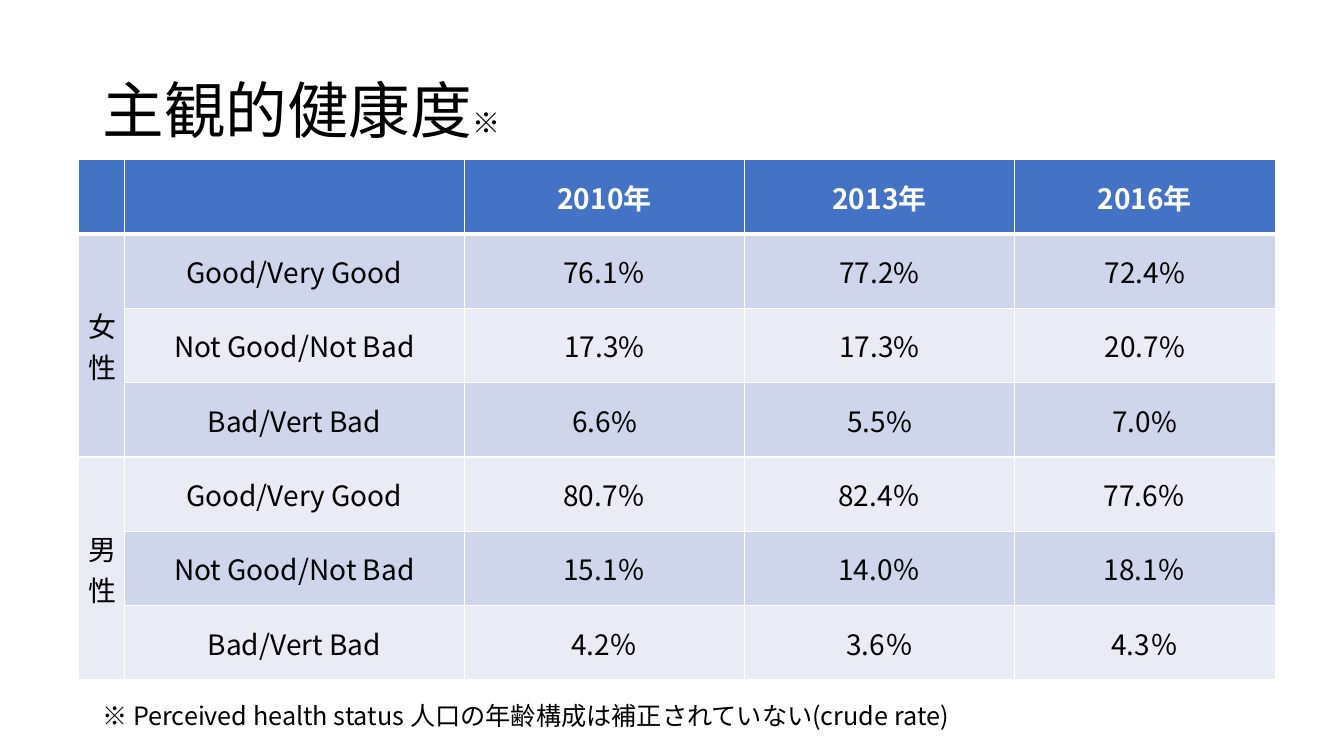
from lxml.etree import SubElement
from pptx import Presentation
from pptx.dml.color import RGBColor
from pptx.enum.text import MSO_ANCHOR, MSO_AUTO_SIZE, PP_ALIGN
from pptx.oxml import parse_xml
from pptx.oxml.ns import nsdecls, qn
from pptx.util import Pt

FONT = "Noto Sans CJK JP"
COLORS = {"text": "000000", "white": "FFFFFF", "header": "4472C4",
          "dark_band": "CFD5EA", "light_band": "E9EBF5"}


def add_text(paragraph, text, size, color="text", bold=False):
    run = paragraph.add_run()
    run.text = text
    formats = {"name": FONT, "size": Pt(size), "bold": bold}
    for name, value in formats.items():
        setattr(run.font, name, value)
    run.font.color.rgb = RGBColor.from_string(COLORS[color])
    SubElement(run.font._element, qn("a:ea"), typeface=FONT)


def set_borders(cell, top, bottom):
    properties = cell._tc.get_or_add_tcPr()
    widths = {"lnL": 1, "lnR": 1, "lnT": top, "lnB": bottom}
    for index, (side, width) in enumerate(widths.items()):
        properties.insert(index, parse_xml(
            f'<a:{side} {nsdecls("a")} w="{Pt(width)}"><a:solidFill>'
            f'<a:srgbClr val="{COLORS["white"]}"/></a:solidFill></a:{side}>'))


presentation = Presentation()
presentation.slide_width, presentation.slide_height = Pt(960), Pt(540)
slide = presentation.slides.add_slide(presentation.slide_layouts[5])

# Title
title = slide.shapes.title
title.left, title.top, title.width, title.height = Pt(66), Pt(28.75), Pt(828), Pt(104.4)
title.text_frame.auto_size = MSO_AUTO_SIZE.NONE
title.text_frame.vertical_anchor = MSO_ANCHOR.MIDDLE
paragraph = title.text_frame.paragraphs[0]
paragraph.alignment = PP_ALIGN.LEFT
paragraph.line_spacing = 0.9
add_text(paragraph, "主観的健康度", 44)
add_text(paragraph, "※", 20)

# Table of health status by sex and year
rows = [
    ["", "", "2010年", "2013年", "2016年"],
    ["女性", "Good/Very Good", "76.1％", "77.2%", "72.4%"],
    ["", "Not Good/Not Bad", "17.3%", "17.3%", "20.7%"],
    ["", "Bad/Vert Bad", "6.6%", "5.5%", "7.0%"],
    ["男性", "Good/Very Good", "80.7％", "82.4％", "77.6％"],
    ["", "Not Good/Not Bad", "15.1％", "14.0％", "18.1％"],
    ["", "Bad/Vert Bad", "4.2％", "3.6％", "4.3％"],
]
column_widths = [33.3, 242.6, 200.5, 192.4, 186.5]
row_height = 53.1
table = slide.shapes.add_table(
    len(rows), len(column_widths), Pt(55.7), Pt(114.1),
    Pt(sum(column_widths)), Pt(row_height * len(rows))).table
for column, width in zip(table.columns, column_widths):
    column.width = Pt(width)

for row_index, row in enumerate(rows):
    table.rows[row_index].height = Pt(row_height)
    is_header = row_index == 0
    band = "header" if is_header else "dark_band" if row_index % 2 else "light_band"
    for column_index, text in enumerate(row):
        cell = table.cell(row_index, column_index)
        cell.fill.solid()
        cell.fill.fore_color.rgb = RGBColor.from_string(COLORS[band])
        cell.vertical_anchor = MSO_ANCHOR.MIDDLE
        set_borders(cell, 3 if row_index == 1 else 1, 3 if is_header else 1)
        paragraph = cell.text_frame.paragraphs[0]
        paragraph.alignment = PP_ALIGN.CENTER
        if text:
            add_text(paragraph, text, 20, "white" if is_header else "text", is_header)

# Vertical labels spanning three rows each
for first_row in (1, 4):
    label = table.cell(first_row, 0)
    label.merge(table.cell(first_row + 2, 0))
    label._tc.get_or_add_tcPr().set("vert", "eaVert")

# Footnote
footnote = slide.shapes.add_textbox(Pt(66), Pt(496.8), Pt(867), Pt(29.1))
footnote.text_frame.word_wrap = True
add_text(footnote.text_frame.paragraphs[0],
         "※ Perceived health status 人口の年齢構成は補正されていない(crude rate)", 18)

presentation.save("out.pptx")
